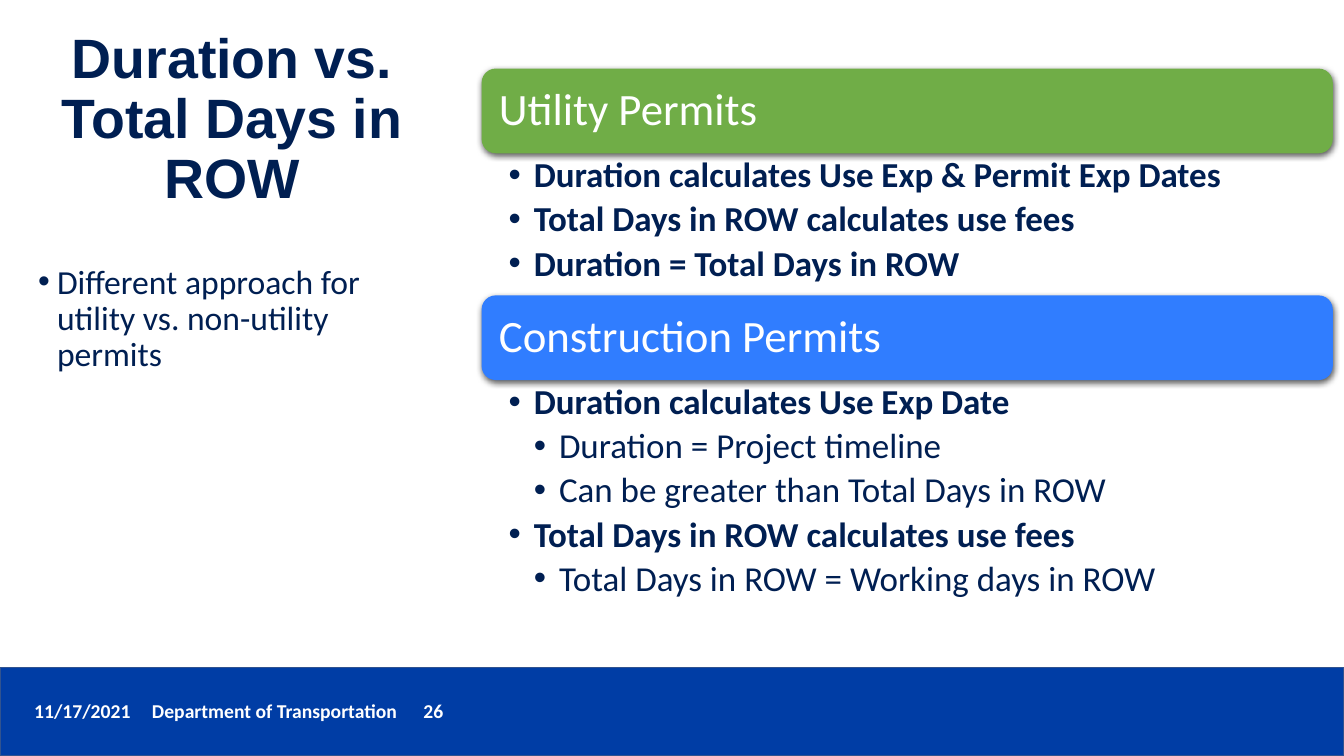
from lxml.etree import SubElement
from pptx import Presentation
from pptx.dml.color import RGBColor
from pptx.enum.shapes import MSO_SHAPE
from pptx.enum.text import MSO_ANCHOR, MSO_AUTO_SIZE
from pptx.oxml.ns import qn
from pptx.util import Pt

COLORS = {
    "navy": "001F52",
    "white": "FFFFFF",
    "footer": "003DA5",
    "footer_edge": "31538F",
    "utility": "70AD47",
    "construction": "307DFF",
    "shadow": "000000",
}
SECTIONS = [
    ("Utility Permits", "utility", 101.5, [
        (1, "Duration calculates Use Exp & Permit Exp Dates"),
        (1, "Total Days in ROW calculates use fees"),
        (1, "Duration = Total Days in ROW"),
    ]),
    ("Construction Permits", "construction", 172, [
        (1, "Duration calculates Use Exp Date"),
        (2, "Duration = Project timeline"),
        (2, "Can be greater than Total Days in ROW"),
        (1, "Total Days in ROW calculates use fees"),
        (2, "Total Days in ROW = Working days in ROW"),
    ]),
]
SECTION_LEFT, SECTION_TOP, SECTION_WIDTH, HEADING_HEIGHT = 344, 49, 608, 60.5


def color(name):
    """Return the named colour."""
    return RGBColor.from_string(COLORS[name])


def set_frame(shape, insets=(7.2, 3.6, 7.2, 3.6), anchor=MSO_ANCHOR.TOP):
    """Set wrapping, insets and anchor, and return the text frame."""
    frame = shape.text_frame
    frame.word_wrap = True
    frame.auto_size = MSO_AUTO_SIZE.NONE
    frame.vertical_anchor = anchor
    (frame.margin_left, frame.margin_top,
     frame.margin_right, frame.margin_bottom) = map(Pt, insets)
    return frame


def write(paragraph, text, size, font="Calibri", fill="navy", bold=False,
          line=0.9, after=0, indent=0, hanging=0, tabs=()):
    """Fill a paragraph with formatted text, with optional bullet or tabs."""
    props = paragraph._p.get_or_add_pPr()
    if hanging:
        props.set("marL", str(Pt(indent)))
        props.set("indent", str(-Pt(hanging)))
        SubElement(props, qn("a:buFont"), typeface="Arial")
        SubElement(props, qn("a:buChar"), char="•")
    if tabs:
        stops = SubElement(props, qn("a:tabLst"))
        for position in tabs:
            SubElement(stops, qn("a:tab"), pos=str(Pt(position)), algn="l")
    paragraph.line_spacing = line
    paragraph.space_before = Pt(0)
    paragraph.space_after = Pt(after)
    run = paragraph.add_run()
    run.text = text
    run.font.name = font
    run.font.size = Pt(size)
    run.font.bold = bold
    run.font.color.rgb = color(fill)


def add_text_area(slide, left, top, width, height, **frame_format):
    """Add a text box and return its text frame."""
    box = slide.shapes.add_textbox(Pt(left), Pt(top), Pt(width), Pt(height))
    return set_frame(box, **frame_format)


def add_panel(slide, kind, left, top, width, height, fill):
    """Add a filled shape without line or shadow."""
    panel = slide.shapes.add_shape(kind, Pt(left), Pt(top), Pt(width), Pt(height))
    panel.shadow.inherit = False
    panel.fill.solid()
    panel.fill.fore_color.rgb = color(fill)
    panel.line.fill.background()
    return panel


def add_drop_shadow(shape):
    """Give a shape a soft shadow just below it."""
    effects = shape._element.spPr.find(qn("a:effectLst"))
    shadow = SubElement(effects, qn("a:outerShdw"), blurRad=str(Pt(4.5)),
                        dist=str(Pt(1.5)), dir="5400000", algn="ctr", rotWithShape="0")
    tone = SubElement(shadow, qn("a:srgbClr"), val=COLORS["shadow"])
    SubElement(tone, qn("a:alpha"), val="63000")


def add_footer(slide):
    """Add the footer band with date, department and page number."""
    band = add_panel(slide, MSO_SHAPE.RECTANGLE, 0, 476.6, 960, 63.4, "footer")
    band.line.color.rgb = color("footer_edge")
    band.line.width = Pt(1)
    caption = add_text_area(slide, 17.3, 496, 724, 24.5)
    write(caption.paragraphs[0], "11/17/2021\tDepartment of Transportation\t26", 14,
          fill="white", bold=True, line=1, tabs=(84.2, 278))


def add_title(slide):
    """Place and format the slide title."""
    title = slide.shapes.title
    title.left, title.top, title.width, title.height = map(Pt, (20.2, 33.8, 291, 104.4))
    frame = set_frame(title, anchor=MSO_ANCHOR.MIDDLE)
    write(frame.paragraphs[0], "Duration vs. Total Days in ROW", 39.6, font="Arial", bold=True)


def add_section(slide, top, heading, fill, list_height, points):
    """Add a heading bar with its bullet list and return the bottom edge."""
    bar = add_panel(slide, MSO_SHAPE.ROUNDED_RECTANGLE, SECTION_LEFT, top,
                    SECTION_WIDTH, HEADING_HEIGHT, fill)
    add_drop_shadow(bar)
    frame = set_frame(bar, insets=(9.4, 3.6, 9.4, 3.6), anchor=MSO_ANCHOR.MIDDLE)
    write(frame.paragraphs[0], heading, 32, fill="white")
    frame.paragraphs[0].alignment = 1
    list_top = top + HEADING_HEIGHT
    details = add_text_area(slide, SECTION_LEFT, list_top, SECTION_WIDTH, list_height,
                            insets=(19.3, 3, 18, 3))
    for index, (level, text) in enumerate(points):
        paragraph = details.add_paragraph() if index else details.paragraphs[0]
        paragraph.level = level
        write(paragraph, text, 25, bold=level == 1, after=4.6,
              indent=18 * level, hanging=18)
    return list_top + list_height


def main():
    """Build the slide and save it."""
    deck = Presentation()
    deck.slide_width, deck.slide_height = Pt(960), Pt(540)
    slide = deck.slides.add_slide(deck.slide_layouts[5])
    add_footer(slide)
    add_title(slide)
    summary = add_text_area(slide, 20.2, 185.8, 276.5, 97.2)
    write(summary.paragraphs[0], "Different approach for utility vs. non-utility permits", 24,
          indent=13.5, hanging=13.5)
    top = SECTION_TOP
    for section in SECTIONS:
        top = add_section(slide, top, *section)
    deck.save("out.pptx")


if __name__ == "__main__":
    main()
